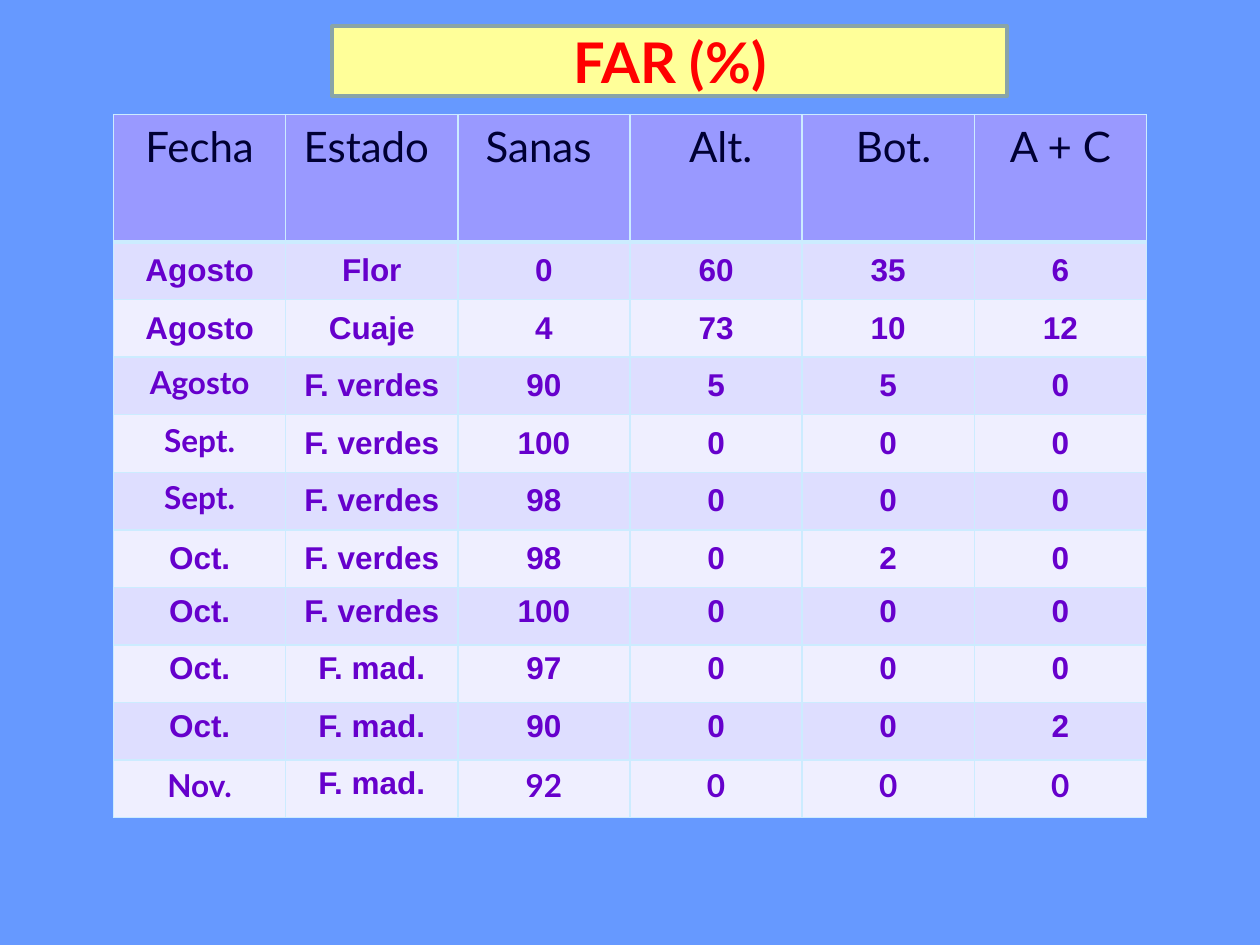
from lxml.etree import SubElement
from pptx import Presentation
from pptx.dml.color import RGBColor
from pptx.enum.text import MSO_ANCHOR as Anchor, MSO_AUTO_SIZE as AutoSize, PP_ALIGN as Align
from pptx.oxml.ns import qn
from pptx.util import Cm, Pt


def color(hex_code):
    return RGBColor.from_string(hex_code)


def write(frame, text, font="Arial", size=18, ink="6600CC", bold=True, anchor=Anchor.MIDDLE):
    frame.vertical_anchor = anchor
    paragraph = frame.paragraphs[0]
    paragraph.alignment = Align.CENTER
    run = paragraph.add_run()
    run.text = text
    run.font.name = font
    run.font.size = Pt(size)
    run.font.bold = bold
    run.font.color.rgb = color(ink)


prs = Presentation()
prs.slide_width, prs.slide_height = Cm(25.4), Cm(19.05)
slide = prs.slides.add_slide(prs.slide_layouts[5])
slide.background.fill.solid()
slide.background.fill.fore_color.rgb = color("6699FF")

heading = slide.shapes.title
heading.left, heading.top, heading.width, heading.height = Cm(6.7), Cm(0.53), Cm(13.61), Cm(1.4)
heading.fill.solid()
heading.fill.fore_color.rgb = color("FFFF99")
heading.line.color.rgb = color("89A4A7")
heading.line.width = Pt(2.25)
heading.text_frame.auto_size = AutoSize.NONE
write(heading.text_frame, "FAR (%)", font="Lato", size=32, ink="FF0000")

headers = ["Fecha", "Estado ", "Sanas ", " Alt.", " Bot.", "A + C"]
records = [
    ["Agosto", "Flor", "0", "60", "35", "6"],
    ["Agosto", "Cuaje", "4", "73", "10", "12"],
    ["Agosto", "F. verdes", "90", "5", "5", "0"],
    ["Sept.", "F. verdes", "100", "0", "0", "0"],
    ["Sept.", "F. verdes", "98", "0", "0", "0"],
    ["Oct.", "F. verdes", "98", "0", "2", "0"],
    ["Oct.", "F. verdes", "100", "0", "0", "0"],
    ["Oct.", "F. mad.", "97", "0", "0", "0"],
    ["Oct.", "F. mad.", "90", "0", "0", "2"],
    ["Nov.", "F. mad.", "92", "0", "0", "0"],
]
rows = [headers] + records
lato_dates = {3, 4, 5}
first_top_row = 7
last_row = len(records)
header_height, record_height, column_width = 2.57, 1.16, 3.47

damage = slide.shapes.add_table(
    len(rows), len(headers), Cm(2.29), Cm(2.31),
    Cm(column_width * len(headers)), Cm(header_height + record_height * len(records)),
).table
damage.horz_banding = False
for column in damage.columns:
    column.width = Cm(column_width)

for r, row in enumerate(rows):
    damage.rows[r].height = Cm(record_height if r else header_height)
    band = ("DEDEFF" if r % 2 else "EFEFFF") if r else "9999FF"
    for c, text in enumerate(row):
        cell = damage.cell(r, c)
        properties = cell._tc.get_or_add_tcPr()
        for side in ("lnL", "lnR", "lnT", "lnB"):
            width = Pt(3) if r == 0 and side == "lnB" else Pt(1)
            edge = SubElement(properties, qn(f"a:{side}"), w=str(width))
            SubElement(SubElement(edge, qn("a:solidFill")), qn("a:srgbClr"), val="CCECFF")
        cell.fill.solid()
        cell.fill.fore_color.rgb = color(band)

        lato_date = c == 0 and r in lato_dates
        lato_last = r == last_row and c != 1
        at_top = r == 0 or r >= first_top_row or lato_date
        anchor = Anchor.TOP if at_top else Anchor.MIDDLE
        if r == 0:
            write(cell.text_frame, text, font="Lato", size=24, ink="000033", bold=False, anchor=anchor)
        else:
            font = "Lato" if lato_date or lato_last else "Arial"
            write(cell.text_frame, text, font=font, anchor=anchor)
        cell.vertical_anchor = anchor

prs.save("out.pptx")
